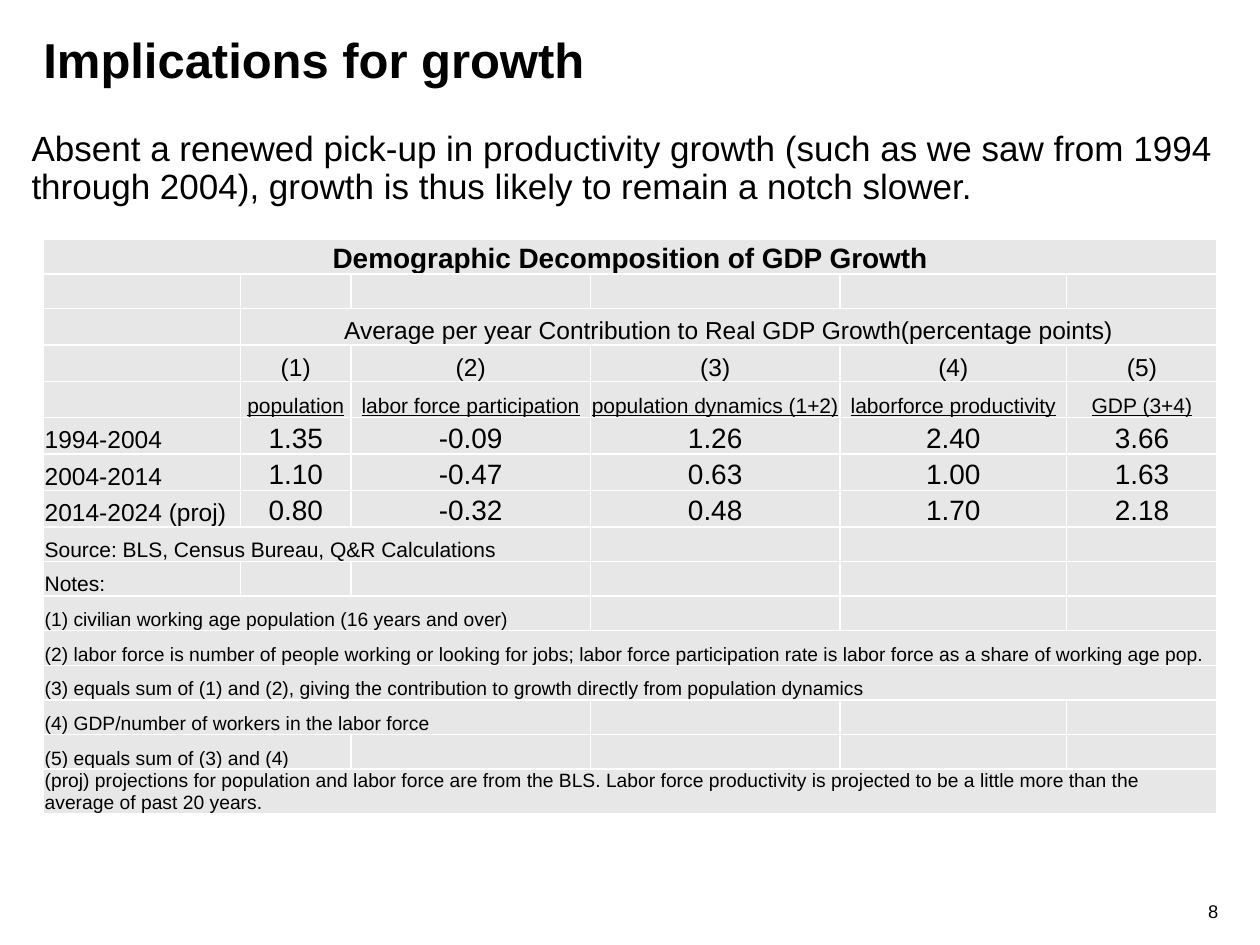
import pptx
import pptx.dml.color
import pptx.enum.text
import pptx.oxml
import pptx.oxml.ns
import pptx.util
from lxml import etree

Pt = pptx.util.Pt
ALIGN = pptx.enum.text.PP_ALIGN
ANCHOR = pptx.enum.text.MSO_ANCHOR

THEME = {
    "font": "Arial",
    "ink": "000000",
    "cell": "E7E7E7",
    "rule": "FFFFFF",
    "rule_width": 1,
    "title": 28,
    "body": 20,
    "number": 10.5,
}
STYLES = {
    "heading": dict(size=16, bold=True, align=ALIGN.CENTER),
    "subheading": dict(size=14, align=ALIGN.CENTER),
    "label": dict(size=12, underline=True, align=ALIGN.CENTER),
    "value": dict(size=16, align=ALIGN.CENTER),
    "period": dict(size=14),
    "source": dict(size=12),
    "note": dict(size=11),
}

TITLE = "Implications for growth"
MESSAGE = ("Absent a renewed pick-up in productivity growth (such as we saw from 1994 "
           "through 2004), growth is thus likely to remain a notch slower.")
SLIDE_NUMBER = "8"

COLUMN_LABELS = ["population", "labor force participation", "population dynamics (1+2)",
                 "laborforce productivity", "GDP (3+4)"]
PERIODS = [
    ("1994-2004", ["1.35", "-0.09", "1.26", "2.40", "3.66"]),
    ("2004-2014", ["1.10", "-0.47", "0.63", "1.00", "1.63"]),
    ("2014-2024 (proj)", ["0.80", "-0.32", "0.48", "1.70", "2.18"]),
]
# Text, style, columns spanned
FOOTNOTES = [
    ("Source: BLS, Census Bureau, Q&R Calculations", "source", 3),
    ("Notes:", "source", 1),
    ("(1) civilian working age population (16 years and over)", "note", 3),
    ("(2) labor force is number of people working or looking for jobs; labor force "
     "participation rate is labor force as a share of working age pop.", "note", 6),
    ("(3) equals sum of (1) and (2), giving the contribution to growth directly from "
     "population dynamics", "note", 6),
    ("(4) GDP/number of workers in the labor force", "note", 3),
    ("(5) equals sum of (3) and (4)", "note", 2),
    ("(proj) projections for population and labor force are from the BLS. Labor force "
     "productivity is projected to be a little more than the average of past 20 years.",
     "note", 6),
]

TABLE_LEFT, TABLE_TOP = 24.8, 136.8
COLUMN_WIDTHS = [112.6, 63.2, 136.8, 142.6, 129.6, 86]
ROW_HEIGHT, TALL_ROW_HEIGHT = 19.8, 20.8
TALL_ROWS = range(2, 8)


def color(value):
    return pptx.dml.color.RGBColor.from_string(value)


def write(frame, text, size, bold=False, underline=False, align=ALIGN.LEFT,
          anchor=ANCHOR.TOP, margins=(0, 3.6, 7.2, 3.6), line_spacing=None, space_after=0):
    """Put one formatted paragraph in a text frame; margins run left, top, right, bottom."""
    frame.word_wrap = True
    frame.auto_size = pptx.enum.text.MSO_AUTO_SIZE.NONE
    frame.vertical_anchor = anchor
    (frame.margin_left, frame.margin_top,
     frame.margin_right, frame.margin_bottom) = map(Pt, margins)
    format_paragraph(frame.paragraphs[0], text, size, bold, underline, align)
    frame.paragraphs[0].line_spacing = line_spacing
    frame.paragraphs[0].space_before = Pt(0)
    frame.paragraphs[0].space_after = Pt(space_after)


def format_paragraph(paragraph, text, size, bold=False, underline=False, align=ALIGN.LEFT):
    paragraph.alignment = align
    run = paragraph.add_run()
    run.text = text
    run.font.name = THEME["font"]
    run.font.size = Pt(size)
    run.font.bold = bold
    run.font.underline = underline
    run.font.color.rgb = color(THEME["ink"])


def place(shape, left, top, width, height):
    shape.left, shape.top, shape.width, shape.height = map(Pt, (left, top, width, height))


def remove_bullet(paragraph):
    properties = paragraph._p.get_or_add_pPr()
    properties.set("marL", "0")
    properties.set("indent", "0")
    etree.SubElement(properties, pptx.oxml.ns.qn("a:buNone"))


def style_cell(cell):
    """Set borders, fill, margins and a small size for cells left empty."""
    for side in ("lnL", "lnR", "lnT", "lnB"):
        cell._tc.get_or_add_tcPr().append(pptx.oxml.parse_xml(
            f'<a:{side} {pptx.oxml.ns.nsdecls("a")} w="{Pt(THEME["rule_width"])}">'
            f'<a:solidFill><a:srgbClr val="{THEME["rule"]}"/></a:solidFill></a:{side}>'))
    cell.fill.solid()
    cell.fill.fore_color.rgb = color(THEME["cell"])
    cell.margin_left = cell.margin_top = cell.margin_right = Pt(0.72)
    cell.margin_bottom = 0
    cell.vertical_anchor = ANCHOR.BOTTOM
    end = etree.SubElement(cell.text_frame.paragraphs[0]._p, pptx.oxml.ns.qn("a:endParaRPr"))
    end.set("sz", str(STYLES["note"]["size"] * 100))


def table_entries():
    """List (row, column, text, style, columns spanned) for every filled cell."""
    entries = [(0, 0, "Demographic Decomposition of GDP Growth", "heading", 6),
               (2, 1, "Average per year Contribution to Real GDP Growth(percentage points)",
                "subheading", 5)]
    for column, label in enumerate(COLUMN_LABELS, 1):
        entries += [(3, column, f"({column})", "subheading", 1),
                    (4, column, label, "label", 1)]
    for row, (period, values) in enumerate(PERIODS, 5):
        entries.append((row, 0, period, "period", 1))
        entries += [(row, column, value, "value", 1) for column, value in enumerate(values, 1)]
    entries += [(row, 0, *note) for row, note in enumerate(FOOTNOTES, 5 + len(PERIODS))]
    return entries


def add_growth_table(slide):
    heights = [TALL_ROW_HEIGHT if row in TALL_ROWS else ROW_HEIGHT
               for row in range(5 + len(PERIODS) + len(FOOTNOTES))]
    table = slide.shapes.add_table(
        len(heights), len(COLUMN_WIDTHS), Pt(TABLE_LEFT), Pt(TABLE_TOP),
        Pt(sum(COLUMN_WIDTHS)), Pt(sum(heights))).table
    table.first_row = table.horz_banding = False
    for column, width in zip(table.columns, COLUMN_WIDTHS):
        column.width = Pt(width)
    for row, height in zip(table.rows, heights):
        row.height = Pt(height)
    for cell in table.iter_cells():
        style_cell(cell)
    for row, column, text, style, span in table_entries():
        cell = table.cell(row, column)
        if span > 1:
            cell.merge(table.cell(row, column + span - 1))
        format_paragraph(cell.text_frame.paragraphs[0], text, **STYLES[style])


def main():
    deck = pptx.Presentation()
    deck.slide_width, deck.slide_height = Pt(720), Pt(540)
    slide = deck.slides.add_slide(deck.slide_layouts[1])

    title, message = slide.placeholders
    place(title, 24.8, 17.3, 671, 51.8)
    write(title.text_frame, TITLE, THEME["title"], bold=True, line_spacing=0.9)

    place(message, 18, 71.3, 684, 396.7)
    remove_bullet(message.text_frame.paragraphs[0])
    write(message.text_frame, MESSAGE, THEME["body"], line_spacing=0.9, space_after=2)

    number = slide.shapes.add_textbox(0, 0, 0, 0)
    place(number, 662.4, 497.5, 33.8, 29.5)
    write(number.text_frame, SLIDE_NUMBER, THEME["number"], align=ALIGN.RIGHT,
          anchor=ANCHOR.BOTTOM, margins=(7.2, 0, 0, 0))

    add_growth_table(slide)
    deck.save("out.pptx")


if __name__ == "__main__":
    main()
